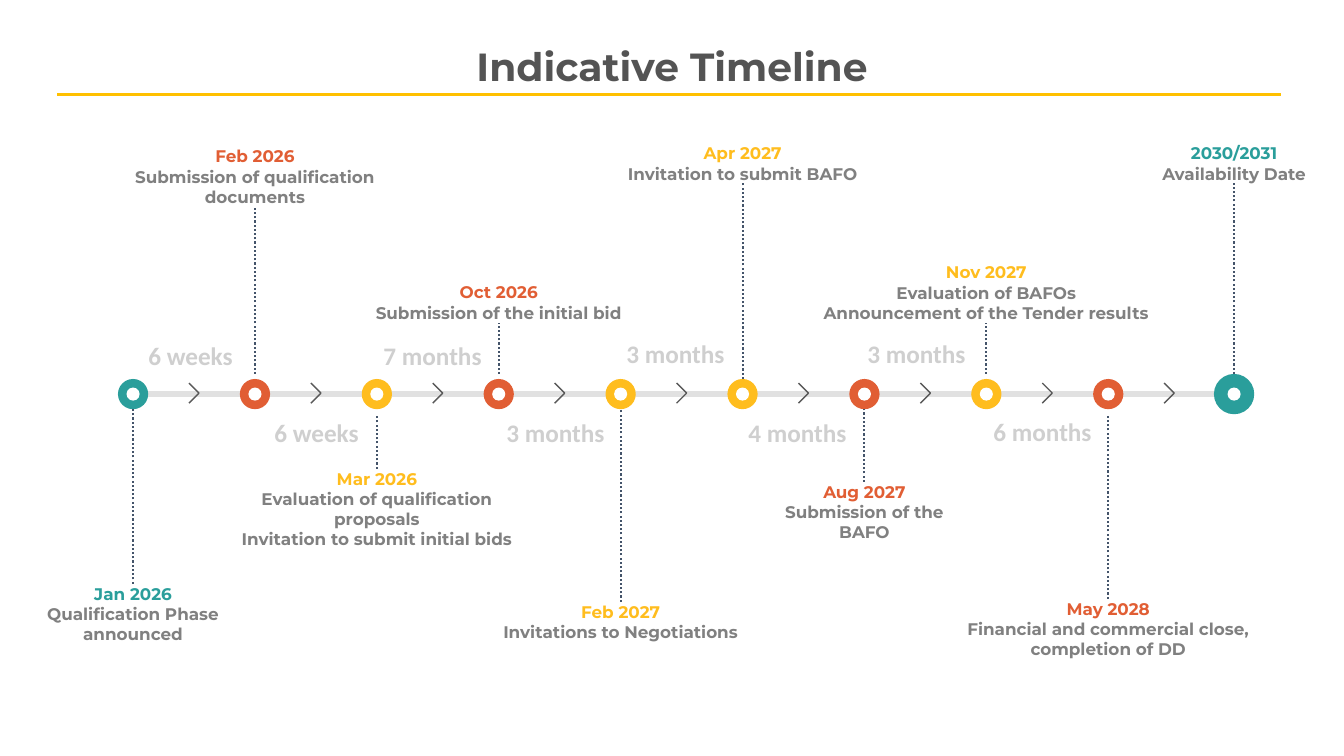
"""Build the Indicative Timeline slide."""
from dataclasses import dataclass
from typing import Optional

import lxml.etree
import pptx
import pptx.dml.color
import pptx.enum.dml
import pptx.enum.shapes
import pptx.enum.text
import pptx.oxml.ns
import pptx.shapes.autoshape
import pptx.shapes.connector
import pptx.slide
import pptx.text.text
import pptx.util

Inches = pptx.util.Inches


@dataclass(frozen=True)
class Theme:
    teal: str = "2A9E9B"
    orange: str = "E15E34"
    yellow: str = "FFBD1E"
    white: str = "FFFFFF"
    title: str = "545454"
    rule: str = "FFC000"
    body: str = "808080"
    duration: str = "CFCFCF"
    rail: str = "E1E1E1"
    stem: str = "44546A"
    chevron: str = "595959"
    heading_font: str = "Montserrat"
    duration_font: str = "Calibri"
    title_size: float = 28
    duration_size: float = 18
    label_size: float = 12


@dataclass(frozen=True)
class Milestone:
    date: str
    lines: tuple[str, ...]
    color: str
    top: float
    width: float
    height: float
    stem: tuple[float, float]
    wrap: bool = False
    ring: float = 0.3
    x: Optional[float] = None


@dataclass(frozen=True)
class Duration:
    text: str
    left: float
    top: float


THEME = Theme()
AXIS_Y = 3.91
FIRST_X = 1.32
STEP = 1.209
HOLE = 0.13
CHEVRON_W, CHEVRON_H = 0.1, 0.1

MILESTONES = (
    Milestone("Jan 2026", ("Qualification Phase", "announced"), THEME.teal, 5.79, 1.77, 0.61, (5.79, 4.06)),
    Milestone("Feb 2026", ("Submission of qualification", "documents"), THEME.orange,
              1.45, 2.45, 0.61, (3.71, 2.06)),
    Milestone("Mar 2026", ("Evaluation of qualification", "proposals", "Invitation to submit initial bids"),
              THEME.yellow, 4.65, 2.71, 1.01, (4.65, 4.13)),
    Milestone("Oct 2026", ("Submission of the initial bid",), THEME.orange, 2.8, 2.46, 0.4, (3.71, 3.2)),
    Milestone("Feb 2027", ("Invitations to Negotiations",), THEME.yellow, 5.97, 2.36, 0.4, (5.97, 4.06)),
    Milestone("Apr 2027", ("Invitation to submit BAFO",), THEME.yellow, 1.42, 2.35, 0.4, (3.76, 1.82)),
    Milestone("Aug 2027", ("Submission of the", "BAFO"), THEME.orange, 4.78, 1.64, 0.61, (4.78, 4.06)),
    Milestone("Nov 2027", ("Evaluation of BAFOs", "Announcement of the Tender results"), THEME.yellow,
              2.6, 3.26, 0.61, (3.71, 3.2)),
    Milestone("May 2028", ("Financial and commercial close, completion of DD",), THEME.orange,
              5.94, 2.9, 0.61, (5.94, 4.11), wrap=True),
    Milestone("2030/2031", ("Availability Date",), THEME.teal, 1.42, 2.05, 0.4, (3.71, 1.82),
              wrap=True, ring=0.4, x=12.24),
)

DURATIONS = (
    Duration("6 weeks", 1.24, 3.33),
    Duration("6 weeks", 2.49, 4.09),
    Duration("7 months", 3.64, 3.33),
    Duration("3 months", 4.86, 4.09),
    Duration("3 months", 6.05, 3.31),
    Duration("4 months", 7.26, 4.09),
    Duration("3 months", 8.44, 3.31),
    Duration("6 months", 9.69, 4.08),
)


def rgb(color: str) -> pptx.dml.color.RGBColor:
    return pptx.dml.color.RGBColor.from_string(color)


def write(p: pptx.text.text._Paragraph, text: str, *, size: float, color: str, font: str) -> None:
    p.alignment = pptx.enum.text.PP_ALIGN.CENTER
    r = p.add_run()
    r.text = text
    r.font.size = pptx.util.Pt(size)
    r.font.name = font
    r.font.bold = True
    r.font.color.rgb = rgb(color)


def add_text_frame(s: pptx.slide.Slide, left: float, top: float, width: float, height: float,
                   *, wrap: bool = True) -> pptx.text.text.TextFrame:
    tf = s.shapes.add_textbox(Inches(left), Inches(top), Inches(width), Inches(height)).text_frame
    tf.word_wrap = wrap
    tf.auto_size = pptx.enum.text.MSO_AUTO_SIZE.SHAPE_TO_FIT_TEXT
    return tf


def add_line(s: pptx.slide.Slide, x1: float, y1: float, x2: float, y2: float,
             *, color: str, width: float, dotted: bool = False) -> None:
    sp = s.shapes.add_connector(pptx.enum.shapes.MSO_CONNECTOR.STRAIGHT,
                                Inches(x1), Inches(y1), Inches(x2), Inches(y2))
    sp.line.color.rgb = rgb(color)
    sp.line.width = pptx.util.Pt(width)
    if dotted:
        sp.line.dash_style = pptx.enum.dml.MSO_LINE.ROUND_DOT
    lxml.etree.SubElement(sp._element.spPr, pptx.oxml.ns.qn("a:effectLst"))


def add_disc(s: pptx.slide.Slide, x: float, diameter: float, color: str) -> None:
    sp = s.shapes.add_shape(pptx.enum.shapes.MSO_SHAPE.OVAL, Inches(x - diameter / 2),
                            Inches(AXIS_Y - diameter / 2), Inches(diameter), Inches(diameter))
    sp.shadow.inherit = False
    sp.fill.solid()
    sp.fill.fore_color.rgb = rgb(color)
    sp.line.fill.background()


def add_title(s: pptx.slide.Slide, text: str) -> None:
    sp = s.shapes.title
    sp.left, sp.top, sp.width, sp.height = (Inches(v) for v in (0.74, 0.37, 11.85, 0.57))
    tf = sp.text_frame
    tf.vertical_anchor = pptx.enum.text.MSO_ANCHOR.MIDDLE
    write(tf.paragraphs[0], text, size=THEME.title_size, color=THEME.title, font=THEME.heading_font)
    add_line(s, 0.57, 0.94, 12.71, 0.94, color=THEME.rule, width=2)


def add_milestone(s: pptx.slide.Slide, m: Milestone, x: float) -> None:
    add_disc(s, x, m.ring, m.color)
    add_disc(s, x, HOLE, THEME.white)
    add_line(s, x, m.stem[0], x, m.stem[1], color=THEME.stem, width=1.5, dotted=True)
    tf = add_text_frame(s, x - m.width / 2, m.top, m.width, m.height, wrap=m.wrap)
    tf.margin_left = tf.margin_top = tf.margin_right = tf.margin_bottom = 0
    write(tf.paragraphs[0], m.date, size=THEME.label_size, color=m.color, font=THEME.heading_font)
    for line in m.lines:
        write(tf.add_paragraph(), line, size=THEME.label_size, color=THEME.body, font=THEME.heading_font)


def add_chevron(s: pptx.slide.Slide, x: float) -> None:
    tip_y = AXIS_Y - 0.01
    for dy in (-CHEVRON_H, CHEVRON_H):
        add_line(s, x - CHEVRON_W / 2, tip_y + dy, x + CHEVRON_W / 2, tip_y, color=THEME.chevron, width=1)


def add_duration(s: pptx.slide.Slide, d: Duration) -> None:
    tf = add_text_frame(s, d.left, d.top, 1.3, 0.4)
    write(tf.paragraphs[0], d.text, size=THEME.duration_size, color=THEME.duration, font=THEME.duration_font)


def main() -> None:
    prs = pptx.Presentation()
    prs.slide_width, prs.slide_height = Inches(13.33), Inches(7.5)
    s = prs.slides.add_slide(prs.slide_layouts[5])
    add_title(s, "Indicative Timeline")
    add_line(s, 1.34, AXIS_Y, 12.28, AXIS_Y, color=THEME.rail, width=4.5)
    for i, m in enumerate(MILESTONES):
        add_milestone(s, m, m.x or FIRST_X + i * STEP)
    for i in range(len(MILESTONES) - 1):
        add_chevron(s, FIRST_X + (i + 0.5) * STEP)
    for d in DURATIONS:
        add_duration(s, d)
    prs.save("out.pptx")


if __name__ == "__main__":
    main()
